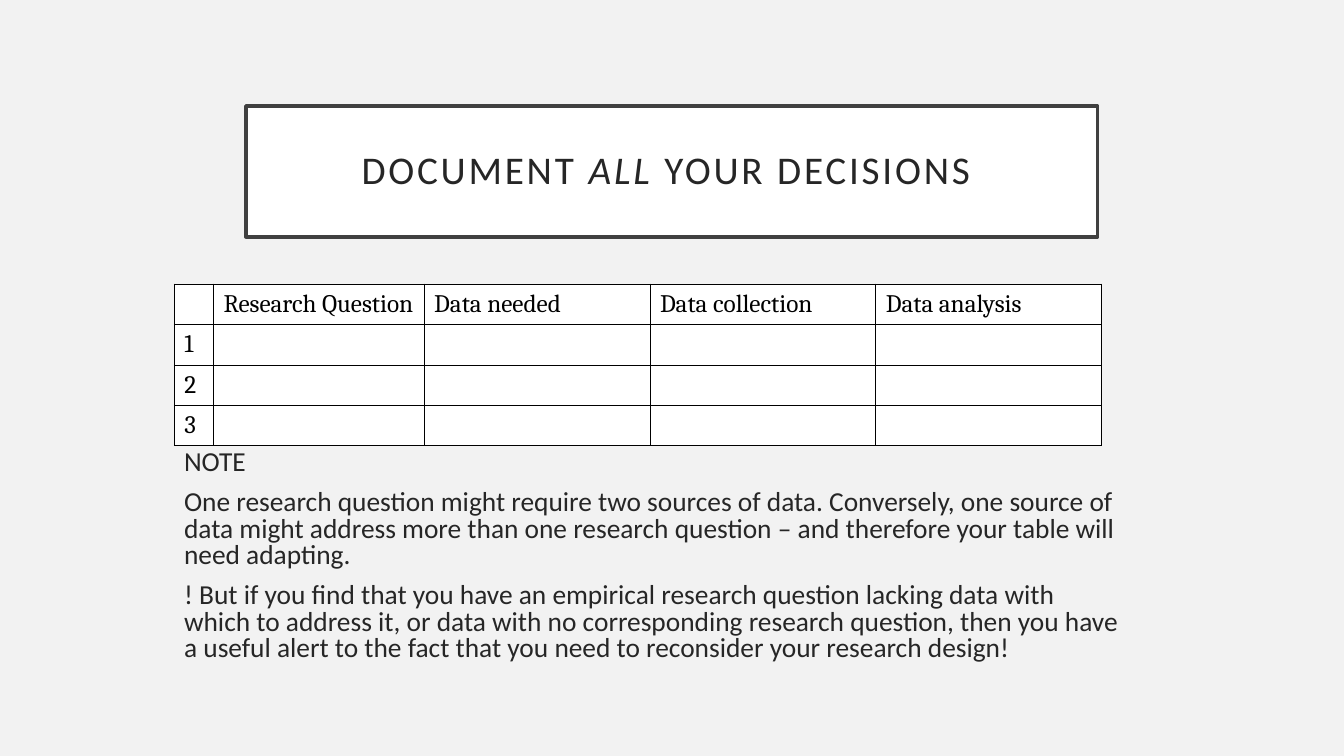
from dataclasses import dataclass

from lxml import etree
from pptx import Presentation
from pptx import util as u
from pptx.dml.color import RGBColor
from pptx.enum import shapes, text
from pptx.oxml import ns

HEADING = [("DOCUMENT ", False), ("ALL ", True), ("YOUR DECISIONS ", False)]
PLAN = [
    ["", "Research Question", "Data needed", "Data collection", "Data analysis"],
    ["1", "", "", "", ""],
    ["2", "", "", "", ""],
    ["3", "", "", "", ""],
]
NOTES = [
    "NOTE",
    "One research question might require two sources of data. Conversely, one source "
    "of data might address more than one research question – and therefore your table "
    "will need adapting.",
    "! But if you find that you have an empirical research question lacking data with "
    "which to address it, or data with no corresponding research question, then you have "
    "a useful alert to the fact that you need to reconsider your research design!",
]


@dataclass(frozen=True)
class Theme:
    background: str = "F2F2F2"
    panel: str = "FFFFFF"
    frame: str = "404040"
    ink: str = "262626"
    grid: str = "000000"
    sans: str = "Calibri"
    serif: str = "Cambria"
    heading_size: float = 28
    note_size: float = 19.6
    plan_size: float = 18
    empty_size: float = 12
    outer_line: float = 0.75
    inner_line: float = 0.5


THEME = Theme()
LEFT = 4.39
PLAN_TOP, ROW_HEIGHT = 7.16, 0.99
COLUMN_WIDTHS = [0.99, 5.31, 5.69, 5.69, 5.69]


def paint(fill, colour):
    fill.solid()
    fill.fore_color.rgb = RGBColor.from_string(colour)


def add_run(paragraph, words, font, size, colour, italic=None):
    run = paragraph.add_run()
    run.text = words
    run.font.name = font
    run.font.size = u.Pt(size)
    run.font.italic = italic
    run.font.color.rgb = RGBColor.from_string(colour)
    return run


def add_border(cell, side, width):
    line = etree.SubElement(cell._tc.get_or_add_tcPr(), ns.qn(f"a:ln{side}"),
                            w=str(u.Pt(width)))
    solid = etree.SubElement(line, ns.qn("a:solidFill"))
    etree.SubElement(solid, ns.qn("a:srgbClr"), val=THEME.grid)


def add_heading(slide):
    box = slide.shapes.add_shape(shapes.MSO_SHAPE.RECTANGLE, u.Cm(6.2), u.Cm(2.67),
                                 u.Cm(21.46), u.Cm(3.3))
    box.shadow.inherit = False
    paint(box.fill, THEME.panel)
    paint(box.line.fill, THEME.frame)
    box.line.width = u.Pt(2.5)
    frame = box.text_frame
    frame.word_wrap = True
    frame.vertical_anchor = text.MSO_ANCHOR.MIDDLE
    frame.margin_left = frame.margin_right = u.Cm(0.51)
    frame.margin_top = frame.margin_bottom = u.Cm(0.51)
    paragraph = frame.paragraphs[0]
    paragraph.alignment = text.PP_ALIGN.CENTER
    paragraph.line_spacing = 0.9
    for words, italic in HEADING:
        run = add_run(paragraph, words, THEME.sans, THEME.heading_size, THEME.ink, italic)
        run.font._element.set("spc", "200")


def add_notes(slide):
    box = slide.shapes.add_textbox(u.Cm(LEFT), u.Cm(11.23), u.Cm(24.13), u.Cm(6.76))
    frame = box.text_frame
    frame.word_wrap = True
    for i, words in enumerate(NOTES):
        paragraph = frame.add_paragraph() if i else frame.paragraphs[0]
        paragraph.line_spacing = 0.8
        if i:
            paragraph.space_before = u.Pt(10)
        add_run(paragraph, words, THEME.sans, THEME.note_size, THEME.ink)


def add_plan(slide):
    row_count, column_count = len(PLAN), len(COLUMN_WIDTHS)
    plan = slide.shapes.add_table(row_count, column_count, u.Cm(LEFT), u.Cm(PLAN_TOP),
                                  u.Cm(sum(COLUMN_WIDTHS)),
                                  u.Cm(ROW_HEIGHT * row_count)).table
    plan.first_row = plan.horz_banding = False
    for column, width in zip(plan.columns, COLUMN_WIDTHS):
        column.width = u.Cm(width)
    for r, labels in enumerate(PLAN):
        plan.rows[r].height = u.Cm(ROW_HEIGHT)
        for c, label in enumerate(labels):
            cell = plan.cell(r, c)
            cell.vertical_anchor = text.MSO_ANCHOR.MIDDLE
            on_edge = {"L": c == 0, "R": c == column_count - 1,
                       "T": r == 0, "B": r == row_count - 1}
            for side, outer in on_edge.items():
                add_border(cell, side, THEME.outer_line if outer else THEME.inner_line)
            paint(cell.fill, THEME.panel)
            paragraph = cell.text_frame.paragraphs[0]
            if label:
                add_run(paragraph, label, THEME.serif, THEME.plan_size, THEME.grid)
            else:
                etree.SubElement(paragraph._p, ns.qn("a:endParaRPr"),
                                 sz=str(int(THEME.empty_size * 100)))


def main():
    deck = Presentation()
    deck.slide_width, deck.slide_height = u.Cm(33.87), u.Cm(19.05)
    slide = deck.slides.add_slide(deck.slide_layouts[6])
    paint(slide.background.fill, THEME.background)
    add_heading(slide)
    add_notes(slide)
    add_plan(slide)
    deck.save("out.pptx")


if __name__ == "__main__":
    main()
